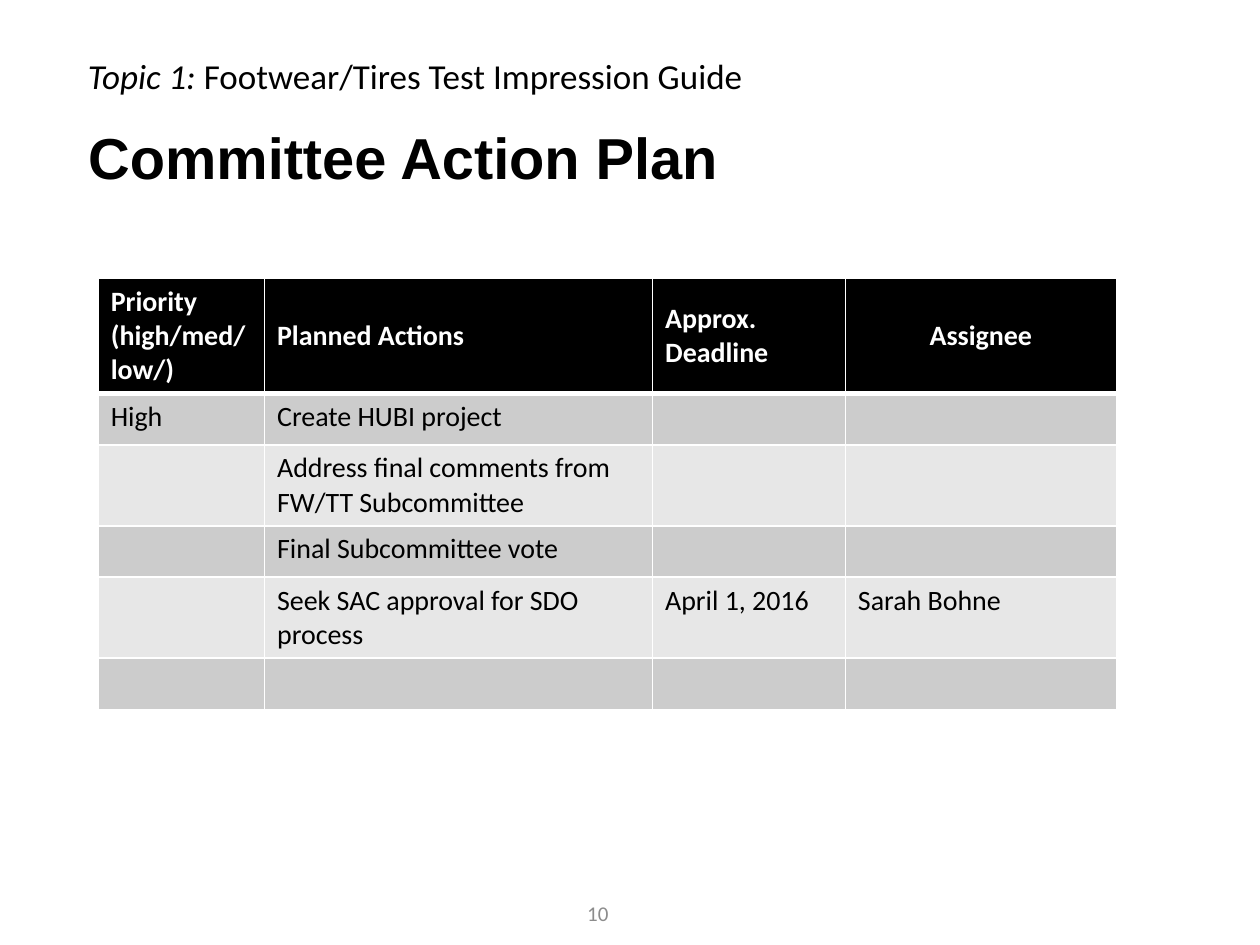
from lxml import etree
from pptx import Presentation
from pptx.dml.color import RGBColor
from pptx.enum.text import MSO_ANCHOR as Anchor, PP_ALIGN as Align
from pptx.oxml.ns import qn
from pptx.util import Inches, Pt

BLACK = RGBColor(0x00, 0x00, 0x00)
WHITE = RGBColor(0xFF, 0xFF, 0xFF)
DARK_BAND = RGBColor(0xCC, 0xCC, 0xCC)
LIGHT_BAND = RGBColor(0xE7, 0xE7, 0xE7)
GRAY = RGBColor(0x8C, 0x8C, 0x8C)


def add_text(paragraph, text, size=16, font="Calibri", color=BLACK,
             bold=False, italic=False, align=Align.LEFT):
    paragraph.alignment = align
    run = paragraph.add_run()
    run.text = text
    run.font.size = Pt(size)
    run.font.name = font
    run.font.color.rgb = color
    run.font.bold = bold
    run.font.italic = italic


def set_borders(cell, color, bottom_width):
    properties = cell._tc.get_or_add_tcPr()
    for index, side in enumerate(("lnL", "lnR", "lnT", "lnB")):
        width = bottom_width if side == "lnB" else 1
        line = etree.Element(qn(f"a:{side}"), w=str(Pt(width)))
        fill = etree.SubElement(line, qn("a:solidFill"))
        etree.SubElement(fill, qn("a:srgbClr"), val=str(color))
        properties.insert(index, line)


presentation = Presentation()
presentation.slide_width = Inches(10)
presentation.slide_height = Inches(7.5)
slide = presentation.slides.add_slide(presentation.slide_layouts[5])

title = slide.shapes.title
title.left, title.top = Inches(0.6), Inches(0.55)
title.width, title.height = Inches(8.62), Inches(1.45)
title.text_frame.vertical_anchor = Anchor.MIDDLE
title_paragraph = title.text_frame.paragraphs[0]
title_paragraph.line_spacing = 0.9
add_text(title_paragraph, "Committee Action Plan", size=33, font="Arial", bold=True)

column_widths = [1.32, 3.08, 1.53, 2.15]
row_heights = [0.67] + [0.4] * 5
rows = [
    ["Priority (high/med/low/)", "Planned Actions", "Approx. Deadline", "Assignee"],
    ["High", "Create HUBI project", "", ""],
    ["", "Address final comments from FW/TT Subcommittee", "", ""],
    ["", "Final Subcommittee vote", "", ""],
    ["", "Seek SAC approval for SDO process", "April 1, 2016", "Sarah Bohne"],
    ["", "", "", ""],
]
table = slide.shapes.add_table(
    len(rows), len(column_widths), Inches(0.78), Inches(2.21),
    Inches(sum(column_widths)), Inches(sum(row_heights))).table
for column, width in zip(table.columns, column_widths):
    column.width = Inches(width)
for row, height in zip(table.rows, row_heights):
    row.height = Inches(height)

for row_index, texts in enumerate(rows):
    is_header = row_index == 0
    band = DARK_BAND if row_index % 2 else LIGHT_BAND
    for column_index, text in enumerate(texts):
        cell = table.cell(row_index, column_index)
        cell.fill.solid()
        cell.fill.fore_color.rgb = BLACK if is_header else band
        cell.vertical_anchor = Anchor.MIDDLE if is_header else Anchor.TOP
        set_borders(cell, WHITE, bottom_width=3 if is_header else 1)
        if text:
            add_text(cell.text_frame.paragraphs[0], text, bold=is_header,
                     color=WHITE if is_header else BLACK,
                     align=Align.CENTER if text == "Assignee" else Align.LEFT)

topic = slide.shapes.add_textbox(Inches(0.6), Inches(0.38), Inches(7.44), Inches(0.44))
topic.text_frame.word_wrap = True
topic_paragraph = topic.text_frame.paragraphs[0]
add_text(topic_paragraph, "Topic 1: ", size=20, italic=True)
add_text(topic_paragraph, "Footwear/Tires Test Impression Guide", size=20)

page_number = slide.shapes.add_textbox(Inches(3.62), Inches(7.05), Inches(2.25), Inches(0.4))
page_number.text_frame.word_wrap = True
page_number.text_frame.vertical_anchor = Anchor.MIDDLE
add_text(page_number.text_frame.paragraphs[0], "10", size=12, color=GRAY, align=Align.CENTER)

presentation.save("out.pptx")
